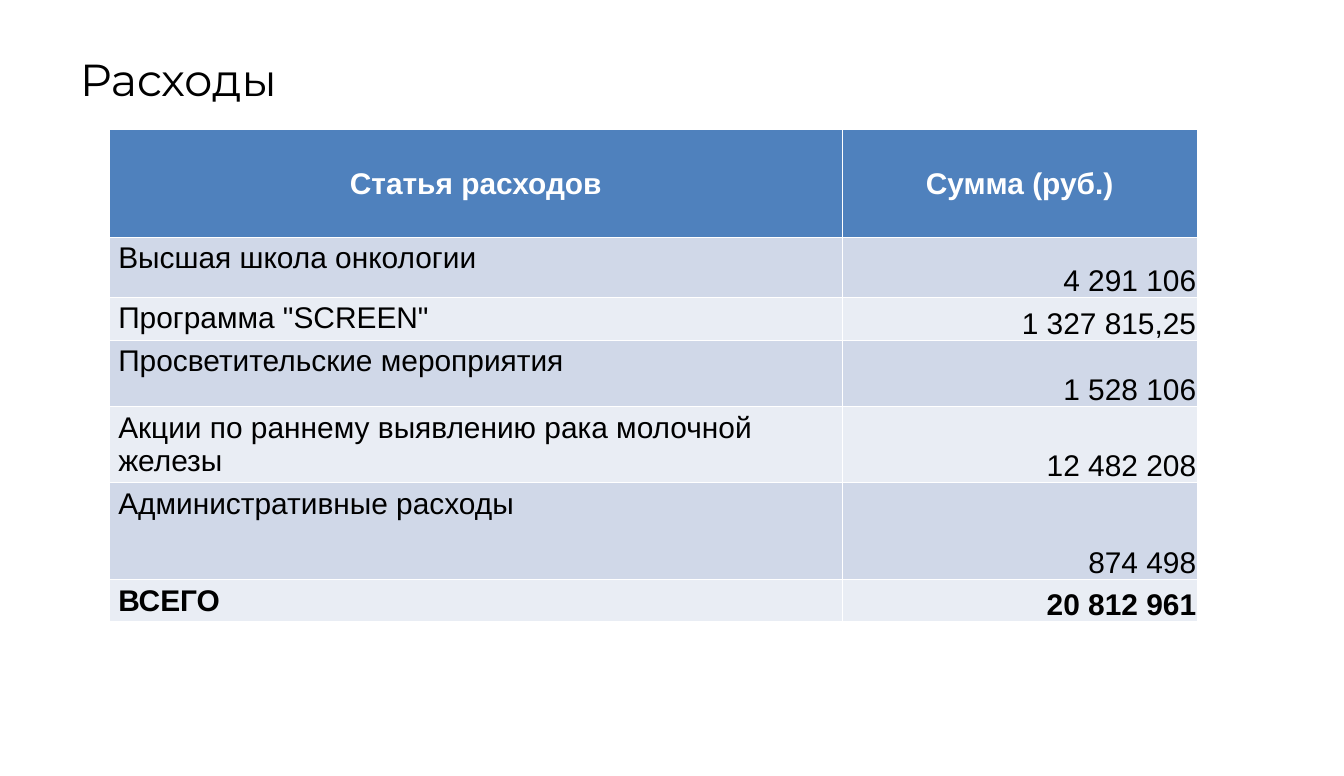
from dataclasses import dataclass

from lxml.etree import SubElement
from pptx import Presentation
from pptx.dml.color import RGBColor
from pptx.enum.text import MSO_ANCHOR as Anchor, PP_ALIGN as Align
from pptx.oxml.ns import qn
from pptx.util import Inches, Pt


@dataclass(frozen=True)
class Theme:
    title_font: str = "Montserrat"
    body_font: str = "Arial"
    title_size: int = 36
    body_size: int = 24
    ink: str = "000000"
    paper: str = "FFFFFF"
    header: str = "4F81BD"
    bands: tuple = ("D0D8E8", "E9EDF4")


THEME = Theme()
HEADER = ("Статья расходов", "Сумма (руб.)")
EXPENSES = [
    ("Высшая школа онкологии", "4 291 106"),
    ('Программа "SCREEN"', "1 327 815,25"),
    ("Просветительские мероприятия", "1 528 106"),
    ("Акции по раннему выявлению рака молочной железы", "12 482 208"),
    ("Административные расходы", "874 498"),
    ("ВСЕГО", "20 812 961"),
]
COL_WIDTHS = (8.18, 3.96)
ROW_HEIGHTS = (1.21, 0.67, 0.48, 0.74, 0.85, 1.08, 0.47)

TIGHT = dict(margin_left=Inches(0.01), margin_right=Inches(0.01),
             margin_top=Inches(0.01), margin_bottom=0)
HEADER_FORMAT = dict(TIGHT, vertical_anchor=Anchor.MIDDLE)
NAME_FORMAT = dict(vertical_anchor=Anchor.TOP)
AMOUNT_FORMAT = dict(TIGHT, vertical_anchor=Anchor.BOTTOM)


def apply(target, formats):
    for name, value in formats.items():
        setattr(target, name, value)


def write(tf, text, font, size, color, align, bold=False):
    p = tf.paragraphs[0]
    p.alignment = align
    r = p.add_run()
    r.text = text
    apply(r.font, dict(name=font, size=Pt(size), bold=bold))
    r.font.color.rgb = RGBColor.from_string(color)


def add_borders(cell, color, width=1):
    """Draw all four sides; border lines must precede the cell fill."""
    tc_pr = cell._tc.get_or_add_tcPr()
    for side in ("lnL", "lnR", "lnT", "lnB"):
        ln = SubElement(tc_pr, qn(f"a:{side}"), w=str(Pt(width)))
        fill = SubElement(ln, qn("a:solidFill"))
        SubElement(fill, qn("a:srgbClr"), val=color)


def fill_cell(cell, text, fill, color, align, formats, bold):
    apply(cell, formats)
    add_borders(cell, THEME.paper)
    cell.fill.solid()
    cell.fill.fore_color.rgb = RGBColor.from_string(fill)
    write(cell.text_frame, text, THEME.body_font, THEME.body_size,
          color, align, bold)


def place_title(slide, box, text):
    sp = slide.shapes.title
    apply(sp, dict(zip(("left", "top", "width", "height"), box)))
    tf = sp.text_frame
    apply(tf, dict(margin_left=Inches(0.14), margin_right=Inches(0.14),
                   margin_top=Inches(0.39), margin_bottom=Inches(0.07),
                   vertical_anchor=Anchor.MIDDLE, word_wrap=True))
    write(tf, text, THEME.title_font, THEME.title_size, THEME.ink, Align.LEFT)


def place_expenses(slide, box):
    rows = [HEADER, *EXPENSES]
    table = slide.shapes.add_table(len(rows), len(HEADER), *box).table
    for col, share in zip(table.columns, COL_WIDTHS):
        col.width = int(box[2] * share / sum(COL_WIDTHS))
    for row, share in zip(table.rows, ROW_HEIGHTS):
        row.height = int(box[3] * share / sum(ROW_HEIGHTS))

    # Header row
    for cell, text in zip(table.rows[0].cells, HEADER):
        fill_cell(cell, text, THEME.header, THEME.paper, Align.CENTER,
                  HEADER_FORMAT, True)

    # Banded expense rows, with the total in bold
    columns = ((Align.LEFT, NAME_FORMAT), (Align.RIGHT, AMOUNT_FORMAT))
    for i, record in enumerate(EXPENSES):
        is_total = i == len(EXPENSES) - 1
        for j, (align, formats) in enumerate(columns):
            fill_cell(table.cell(i + 1, j), record[j], THEME.bands[i % 2],
                      THEME.ink, align, formats, is_total)


def main():
    prs = Presentation()
    prs.slide_width, prs.slide_height = Inches(15), Inches(8.66)
    slide = prs.slides.add_slide(prs.slide_layouts[5])
    place_title(slide, (Inches(0.75), 0, Inches(13.5), Inches(1.44)), "Расходы")
    place_expenses(slide, (Inches(1.22), Inches(1.44),
                           Inches(sum(COL_WIDTHS)), Inches(sum(ROW_HEIGHTS))))
    prs.save("out.pptx")


if __name__ == "__main__":
    main()
